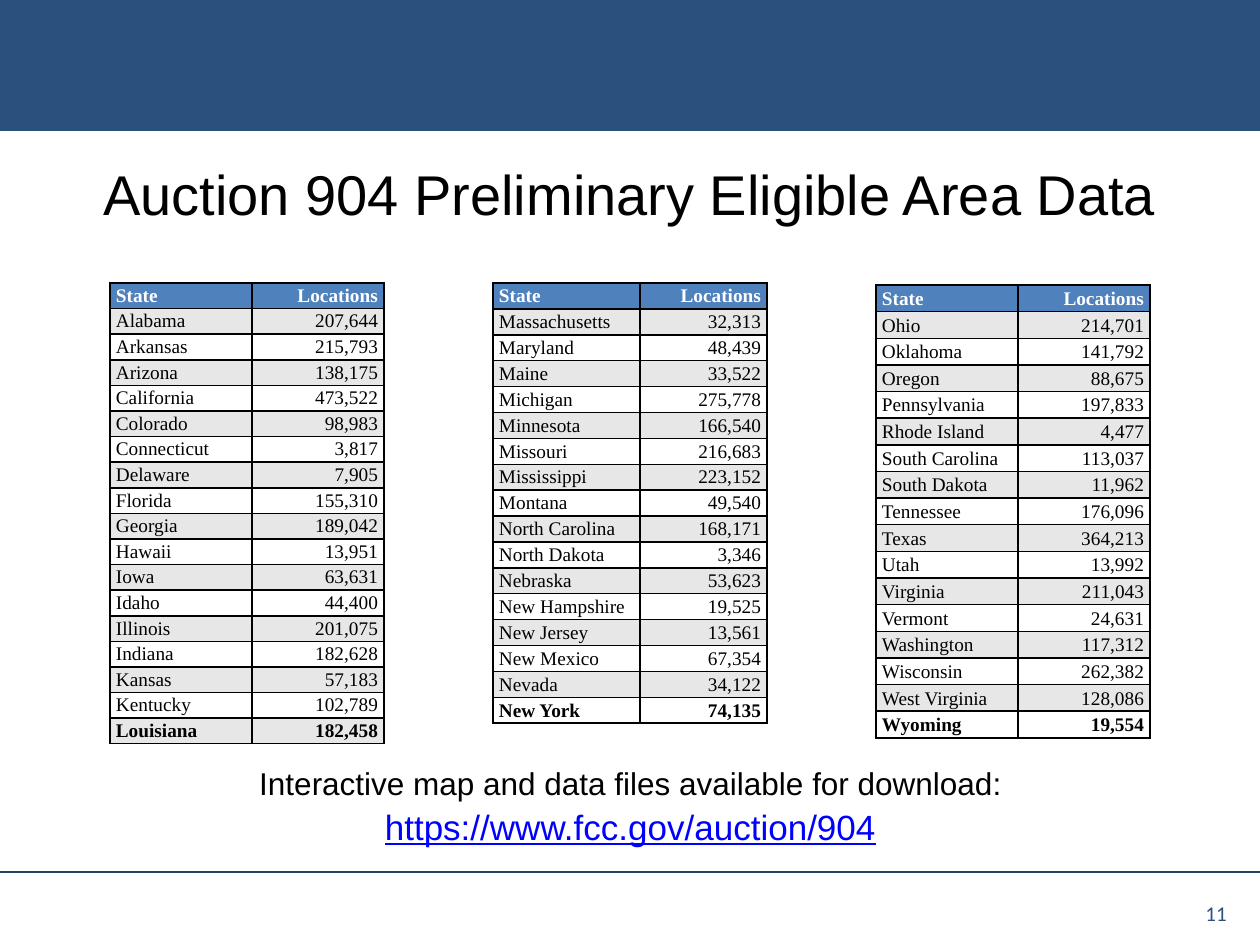
from dataclasses import dataclass

from lxml.etree import SubElement
from pptx import Presentation
from pptx.dml.color import RGBColor
from pptx.enum.shapes import MSO_CONNECTOR, MSO_SHAPE
from pptx.enum.text import MSO_ANCHOR as Anchor, PP_ALIGN as Align
from pptx.oxml import parse_xml
from pptx.oxml.ns import nsdecls, qn
from pptx.util import Emu, Pt

EMU_PER_INCH = 914400
PX_PER_INCH = 126
SLIDE_WIDTH, SLIDE_HEIGHT = 1260, 945

BLACK = RGBColor(0x00, 0x00, 0x00)
WHITE = RGBColor(0xFF, 0xFF, 0xFF)
BAND_BLUE = RGBColor(0x2A, 0x50, 0x7E)
RULE_BLUE = RGBColor(0x25, 0x40, 0x61)
HEADER_BLUE = RGBColor(0x4F, 0x81, 0xBD)
STRIPE_GREY = RGBColor(0xE7, 0xE7, 0xE7)
LINK_BLUE = RGBColor(0x00, 0x00, 0xFF)


@dataclass(frozen=True)
class TextStyle:
    font: str
    size: int
    color: RGBColor = BLACK
    bold: bool = False
    underline: bool = False


@dataclass(frozen=True)
class StateTable:
    left: int
    top: int
    height: int
    column_widths: tuple[int, int]
    locations: dict[str, int]


STATE_TABLES = [
    StateTable(110, 283, 461, (142, 132), {
        "Alabama": 207644, "Arkansas": 215793, "Arizona": 138175,
        "California": 473522, "Colorado": 98983, "Connecticut": 3817,
        "Delaware": 7905, "Florida": 155310, "Georgia": 189042,
        "Hawaii": 13951, "Iowa": 63631, "Idaho": 44400,
        "Illinois": 201075, "Indiana": 182628, "Kansas": 57183,
        "Kentucky": 102789, "Louisiana": 182458,
    }),
    StateTable(493, 283, 441, (147, 127), {
        "Massachusetts": 32313, "Maryland": 48439, "Maine": 33522,
        "Michigan": 275778, "Minnesota": 166540, "Missouri": 216683,
        "Mississippi": 223152, "Montana": 49540, "North Carolina": 168171,
        "North Dakota": 3346, "Nebraska": 53623, "New Hampshire": 19525,
        "New Jersey": 13561, "New Mexico": 67354, "Nevada": 34122,
        "New York": 74135,
    }),
    StateTable(876, 285, 453, (142, 132), {
        "Ohio": 214701, "Oklahoma": 141792, "Oregon": 88675,
        "Pennsylvania": 197833, "Rhode Island": 4477,
        "South Carolina": 113037, "South Dakota": 11962,
        "Tennessee": 176096, "Texas": 364213, "Utah": 13992,
        "Virginia": 211043, "Vermont": 24631, "Washington": 117312,
        "Wisconsin": 262382, "West Virginia": 128086, "Wyoming": 19554,
    }),
]


def px(length: int) -> Emu:
    return Emu(round(length * EMU_PER_INCH / PX_PER_INCH))


def add_text(para, text: str, style: TextStyle, align: Align) -> None:
    para.alignment = align
    span = para.add_run()
    span.text = text
    span.font.name = style.font
    span.font.size = Pt(style.size)
    span.font.color.rgb = style.color
    span.font.bold = style.bold
    span.font.underline = style.underline


def add_text_box(page, left: int, top: int, width: int, height: int, anchor: Anchor):
    box = page.shapes.add_textbox(px(left), px(top), px(width), px(height))
    box.text_frame.word_wrap = True
    box.text_frame.vertical_anchor = anchor
    return box.text_frame


def add_band(page) -> None:
    band = page.shapes.add_shape(MSO_SHAPE.RECTANGLE, 0, 0, px(SLIDE_WIDTH), px(131))
    band.shadow.inherit = False
    band.fill.solid()
    band.fill.fore_color.rgb = BAND_BLUE
    band.line.fill.background()


def add_footer_rule(page) -> None:
    rule = page.shapes.add_connector(
        MSO_CONNECTOR.STRAIGHT, 0, px(872), px(SLIDE_WIDTH), px(872))
    rule.line.color.rgb = RULE_BLUE
    rule.line.width = Pt(1.5)
    SubElement(rule._element.spPr, qn("a:effectLst"))


def add_borders(cell) -> None:
    properties = cell._tc.get_or_add_tcPr()
    for position, side in enumerate(("lnL", "lnR", "lnT", "lnB")):
        properties.insert(position, parse_xml(
            f'<a:{side} {nsdecls("a")} w="{Pt(1)}"><a:solidFill>'
            f'<a:srgbClr val="{BLACK}"/></a:solidFill></a:{side}>'))


def fill_cell(cell, text: str, fill: RGBColor, style: TextStyle, align: Align) -> None:
    cell.margin_left = cell.margin_right = px(6)
    cell.margin_top, cell.margin_bottom = px(0), px(2)
    cell.vertical_anchor = Anchor.BOTTOM
    cell.fill.solid()
    cell.fill.fore_color.rgb = fill
    add_borders(cell)
    add_text(cell.text_frame.paragraphs[0], text, style, align)


def add_state_table(page, data: StateTable) -> None:
    """Draw a striped table whose header and last row are bold."""
    rows = [("State", "Locations")]
    rows += [(state, f"{count:,}") for state, count in data.locations.items()]
    table = page.shapes.add_table(
        len(rows), 2, px(data.left), px(data.top),
        px(sum(data.column_widths)), px(data.height)).table
    for column, width in zip(table.columns, data.column_widths):
        column.width = px(width)
    last = len(rows) - 1
    for row_index, row in enumerate(rows):
        is_header = row_index == 0
        stripe = STRIPE_GREY if row_index % 2 else WHITE
        fill = HEADER_BLUE if is_header else stripe
        style = TextStyle("Times New Roman", 11, WHITE if is_header else BLACK,
                          bold=row_index in (0, last))
        for column_index, align in enumerate((Align.LEFT, Align.RIGHT)):
            fill_cell(table.cell(row_index, column_index), row[column_index],
                      fill, style, align)


def add_title(page) -> None:
    title = page.shapes.title
    title.left, title.top, title.width, title.height = px(63), px(135), px(1134), px(116)
    title.text_frame.vertical_anchor = Anchor.MIDDLE
    add_text(title.text_frame.paragraphs[0], "Auction 904 Preliminary Eligible Area Data",
             TextStyle("Arial", 32), Align.CENTER)


def add_download_note(page) -> None:
    frame = add_text_box(page, 95, 758, 1071, 93, Anchor.TOP)
    add_text(frame.paragraphs[0], "Interactive map and data files available for download:",
             TextStyle("Arial", 18), Align.CENTER)
    address = frame.add_paragraph()
    address.space_before = Pt(2)
    add_text(address, "https://www.fcc.gov/auction/904",
             TextStyle("Arial", 20, LINK_BLUE, underline=True), Align.CENTER)


def main() -> None:
    deck = Presentation()
    deck.slide_width, deck.slide_height = px(SLIDE_WIDTH), px(SLIDE_HEIGHT)
    page = deck.slides.add_slide(deck.slide_layouts[5])
    add_band(page)
    add_footer_rule(page)
    add_title(page)
    number = add_text_box(page, 945, 882, 294, 50, Anchor.BOTTOM)
    add_text(number.paragraphs[0], "11", TextStyle("Calibri", 12, BAND_BLUE), Align.RIGHT)
    for data in STATE_TABLES:
        add_state_table(page, data)
    add_download_note(page)
    deck.save("out.pptx")


if __name__ == "__main__":
    main()
